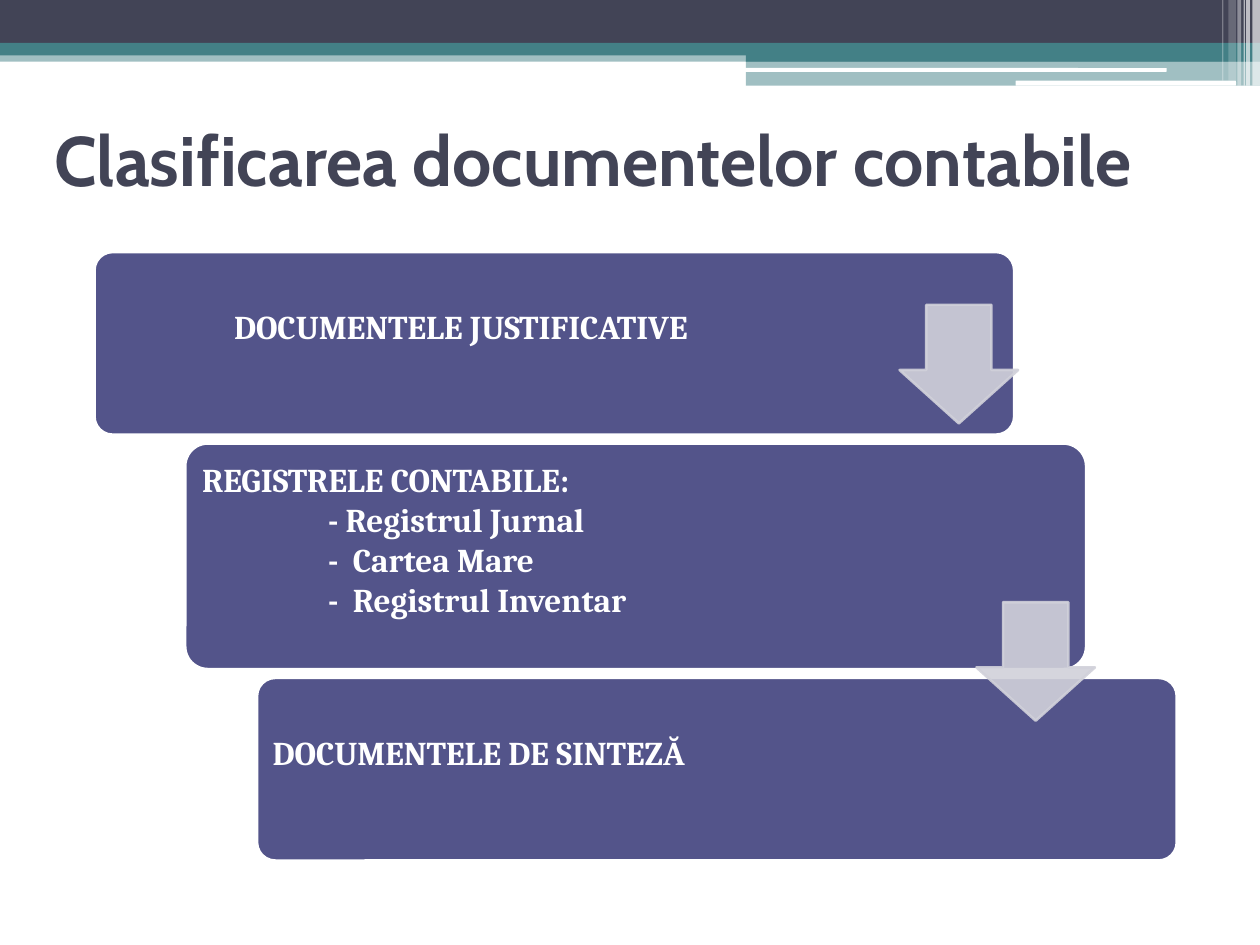
from dataclasses import dataclass

from lxml import etree
from pptx import Presentation
from pptx.dml.color import RGBColor
from pptx.enum.shapes import MSO_SHAPE
from pptx.enum.text import MSO_ANCHOR, PP_ALIGN
from pptx.oxml.ns import qn
from pptx.util import Inches, Pt

RECT, ROUND = MSO_SHAPE.RECTANGLE, MSO_SHAPE.ROUNDED_RECTANGLE
ARROW = MSO_SHAPE.DOWN_ARROW
LEFT, CENTER, MIDDLE = PP_ALIGN.LEFT, PP_ALIGN.CENTER, MSO_ANCHOR.MIDDLE
COLS, ROWS = 100, 75
WIDE, HIGH = Inches(10), Inches(7.5)


@dataclass(frozen=True)
class Theme:
    dark: str = "424456"
    teal: str = "438086"
    white: str = "FFFFFF"
    step: str = "53548A"
    arrow: str = "D1D1DA"
    head_font: str = "Cabin"
    body_font: str = "Cambria"
    head_size: float = 40
    body_size: float = 19
    line: float = 1.5


@dataclass(frozen=True)
class Box:
    """A place on the grid, in columns and rows."""
    x: float
    y: float
    w: float
    h: float

    def place(self) -> tuple[int, int, int, int]:
        col, row = WIDE / COLS, HIGH / ROWS
        return (round(self.x * col), round(self.y * row),
                round(self.w * col), round(self.h * row))


@dataclass(frozen=True)
class Bar:
    box: Box
    color: str
    alpha: int = 100
    kind: int = RECT


@dataclass(frozen=True)
class Step:
    x: float
    w: float
    h: float
    text_w: float
    head: str
    items: tuple[str, ...] = ()
    align: int = LEFT


THEME = Theme()
TEAL, WHITE = THEME.teal, THEME.white

BARS = (
    Bar(Box(0, 4, 100, 0.9), TEAL, 50),
    Bar(Box(0, 0, 100, 3.4), THEME.dark),
    Bar(Box(0, 3.4, 100, 1), TEAL),
    Bar(Box(59.2, 3.9, 40.8, 1), TEAL),
    Bar(Box(59.2, 4.8, 40.8, 2), TEAL, 50),
    Bar(Box(59.1, 5.4, 33.5, 0.3), WHITE, kind=ROUND),
    Bar(Box(80.6, 6.4, 17.5, 0.4), WHITE, kind=ROUND),
)
# Pale stripes at the right end: column, width, height, opacity
STRIPES = (
    (99.4, 0.6, 6.8, 65), (98.9, 0.3, 6.8, 65), (98.7, 0.1, 6.8, 60),
    (98.2, 0.3, 6.8, 40), (97.5, 0.6, 6.4, 20), (97, 0.1, 6.4, 30),
)
STEPS = (
    Step(7.5, 73, 14.5, 57.3, "DOCUMENTELE JUSTIFICATIVE", align=CENTER),
    Step(14.7, 71.5, 17.9, 54.9, "REGISTRELE CONTABILE:",
         ("- Registrul Jurnal", "-  Cartea Mare", "-  Registrul Inventar")),
    Step(20.4, 73, 14.5, 56.2, "DOCUMENTELE DE SINTEZĂ"),
)
TOP, GAP = 20, 0.7
ARROWS = (Box(71.4, 24.2, 9.4, 9.4), Box(77.5, 47.8, 9.4, 9.4))


def draw(slide, kind: int, box: Box, color: str, edge: str = "",
         alpha: int = 100, adjust: tuple[float, ...] = ()) -> None:
    shape = slide.shapes.add_shape(kind, *box.place())
    shape.shadow.inherit = False
    shape.fill.solid()
    shape.fill.fore_color.rgb = RGBColor.from_string(color)
    if edge:
        shape.line.color.rgb = RGBColor.from_string(edge)
        shape.line.width = Pt(THEME.line)
    else:
        shape.line.fill.background()
    for i, value in enumerate(adjust):
        shape.adjustments[i] = value
    if alpha < 100:
        for node in shape._element.spPr.iter(qn("a:srgbClr")):
            etree.SubElement(node, qn("a:alpha"), val=str(alpha * 1000))


def style(para, name: str, size: float, color: str, align: int) -> None:
    font = para.font
    font.name, font.size, font.bold = name, Pt(size), True
    font.color.rgb = RGBColor.from_string(color)
    para.alignment = align


def draw_step(slide, step: Step, y: float) -> None:
    draw(slide, ROUND, Box(step.x, y, step.w, step.h), THEME.step,
         edge=WHITE, adjust=(0.1,))
    pad = 0.03 * step.h
    box = Box(step.x + pad, y + pad, step.text_w, step.h - 2 * pad)
    frame = slide.shapes.add_textbox(*box.place()).text_frame
    frame.word_wrap, frame.vertical_anchor = True, MIDDLE
    frame.margin_left = frame.margin_right = frame.margin_top = Inches(0.08)
    frame.margin_bottom = Inches(0.35)
    frame.text = "\n".join((step.head, *step.items))
    for i, para in enumerate(frame.paragraphs):
        style(para, THEME.body_font, THEME.body_size, WHITE, step.align)
        if i:
            para._p.get_or_add_pPr().set("marL", str(WIDE // 10))


def draw_title(slide, text: str) -> None:
    title = slide.shapes.title
    title.left, title.top, title.width, title.height = Box(
        3.3, 6.7, 96.7, 11.7).place()
    frame = title.text_frame
    frame.text, frame.vertical_anchor = text, MIDDLE
    style(frame.paragraphs[0], THEME.head_font, THEME.head_size,
          THEME.dark, LEFT)


def main() -> None:
    deck = Presentation()
    deck.slide_width, deck.slide_height = WIDE, HIGH
    slide = deck.slides.add_slide(deck.slide_layouts[5])

    # Header band
    for bar in BARS:
        draw(slide, bar.kind, bar.box, bar.color, alpha=bar.alpha)
    for x, w, h, alpha in STRIPES:
        draw(slide, RECT, Box(x, 0, w, h), WHITE, alpha=alpha)

    draw_title(slide, "Clasificarea documentelor contabile")

    # Staircase of steps, then the arrows over it
    y = TOP
    for step in STEPS:
        draw_step(slide, step, y)
        y += step.h + GAP
    for box in ARROWS:
        draw(slide, ARROW, box, THEME.arrow, edge=THEME.arrow, alpha=90,
             adjust=(0.55, 0.45))

    deck.save("out.pptx")


if __name__ == "__main__":
    main()
